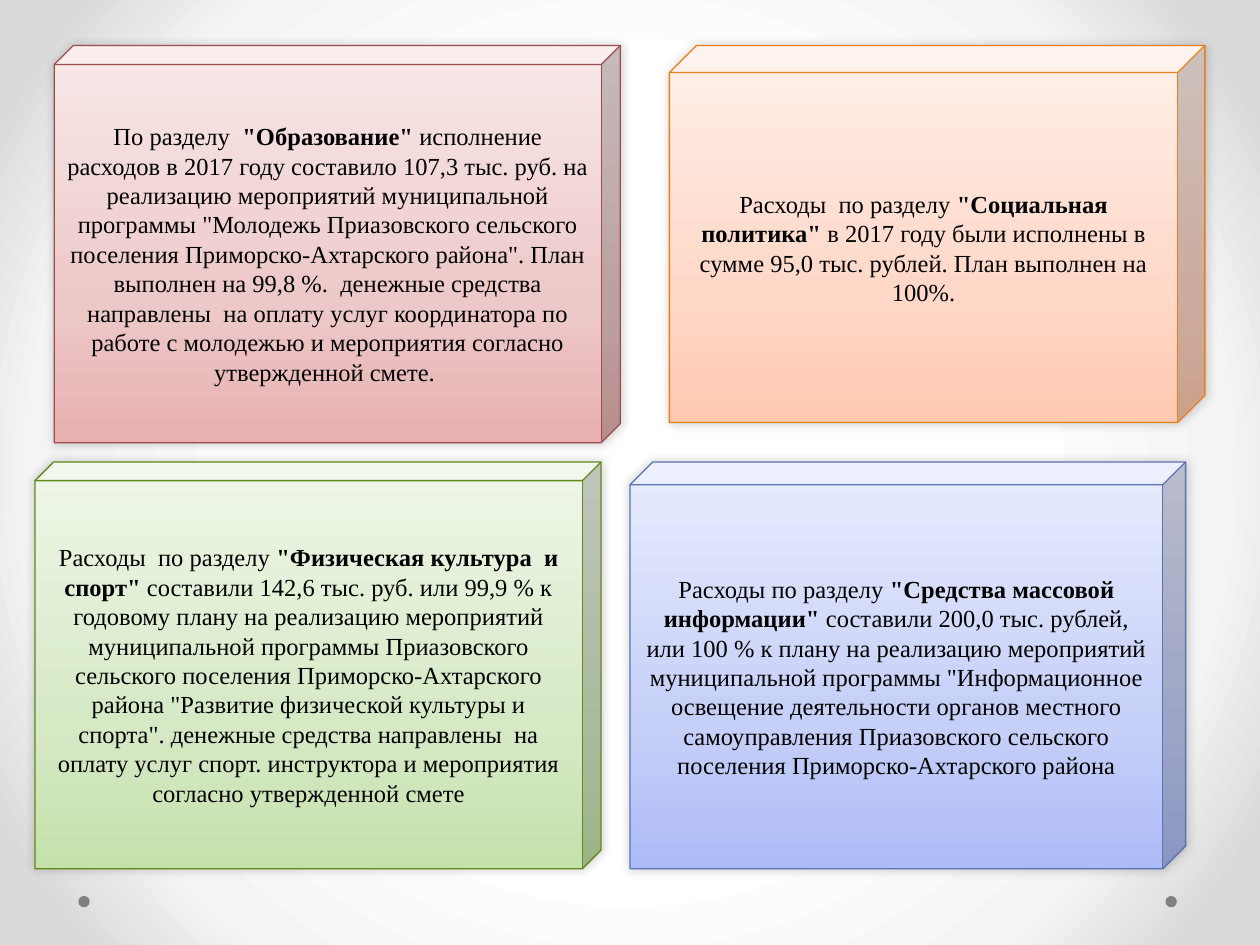
from dataclasses import dataclass

from lxml.etree import SubElement
from pptx import Presentation
from pptx.dml.color import RGBColor
from pptx.enum.shapes import MSO_SHAPE
from pptx.enum.text import MSO_ANCHOR, PP_ALIGN
from pptx.oxml.ns import qn
from pptx.util import Pt

FONT = "Times New Roman"
CUBE_STOPS = (0, 35, 100)


@dataclass
class Card:
    left: float
    top: float
    width: float
    height: float
    depth: float
    colors: tuple[str, str, str]
    line: str
    lead: str
    name: str
    rest: str


CARDS = [
    Card(31, 26, 323.5, 227, 0.048, ("E8B0B0", "EDC8C8", "F9E9E9"), "9A4E4E",
         "По разделу  ", '"Образование"',
         " исполнение расходов в 2017 году составило 107,3 тыс. руб. на реализацию "
         'мероприятий муниципальной программы "Молодежь Приазовского сельского '
         'поселения Приморско-Ахтарского района". План выполнен на 99,8 %.  денежные '
         "средства направлены  на оплату услуг координатора по работе с молодежью и "
         "мероприятия согласно утвержденной смете. "),
    Card(382.5, 26, 306, 215.5, 0.072, ("FFC9B1", "FFD8C8", "FFF0EA"), "E6811C",
         "Расходы  по разделу ", '"Социальная политика"',
         " в 2017 году были исполнены в сумме 95,0 тыс. рублей. План выполнен на 100%."),
    Card(20, 264, 323.5, 232.5, 0.046, ("C5E1AB", "D6E9C5", "EFF7E9"), "62891C",
         "Расходы  по разделу ", '"Физическая культура  и спорт"',
         " составили 142,6 тыс. руб. или 99,9 % к годовому плану на реализацию "
         "мероприятий муниципальной программы Приазовского сельского поселения "
         'Приморско-Ахтарского района "Развитие физической культуры и спорта". '
         "денежные средства направлены  на оплату услуг спорт. инструктора и "
         "мероприятия согласно утвержденной смете"),
    Card(360, 264, 317.5, 232.5, 0.056, ("ADBBF6", "C5CFF8", "E8ECFD"), "5C72B2",
         "Расходы по разделу ", '"Средства массовой информации" ',
         "составили 200,0 тыс. рублей, или 100 % к плану на реализацию мероприятий "
         'муниципальной программы "Информационное освещение деятельности органов '
         "местного самоуправления Приазовского сельского поселения "
         "Приморско-Ахтарского района"),
]


def rgb(color: str) -> RGBColor:
    return RGBColor.from_string(color)


def start_gradient(fill, element, stops):
    fill.gradient()
    grad = element.find(".//" + qn("a:gradFill"))
    for child in list(grad):
        grad.remove(child)
    gs_list = SubElement(grad, qn("a:gsLst"))
    for position, color in stops:
        gs = SubElement(gs_list, qn("a:gs"), pos=str(position * 1000))
        SubElement(gs, qn("a:srgbClr"), val=color)
    return grad


def add_shadow(sp) -> None:
    sp.shadow.inherit = False
    effects = sp.element.spPr.find(qn("a:effectLst"))
    shadow = SubElement(effects, qn("a:outerShdw"), blurRad=str(Pt(6)), dist="0",
                        dir="18900000", rotWithShape="0")
    color = SubElement(shadow, qn("a:srgbClr"), val="000000")
    SubElement(color, qn("a:alpha"), val="20000")


def paint_background(s) -> None:
    stops = [(50, "FFFFFF"), (76, "F4F4F4"), (92, "DADADA")]
    grad = start_gradient(s.background.fill, s.element, stops)
    route = SubElement(grad, qn("a:path"), {"path": "circle"})
    SubElement(route, qn("a:fillToRect"), l="50000", t="50000", r="50000", b="50000")


def add_dot(s, left: float) -> None:
    sp = s.shapes.add_shape(MSO_SHAPE.OVAL, Pt(left), Pt(512), Pt(6.5), Pt(6.5))
    sp.shadow.inherit = False
    sp.fill.solid()
    sp.fill.fore_color.rgb = rgb("808080")
    sp.line.fill.background()


def add_card(s, card: Card) -> None:
    sp = s.shapes.add_shape(MSO_SHAPE.CUBE, Pt(card.left), Pt(card.top),
                            Pt(card.width), Pt(card.height))
    sp.adjustments[0] = card.depth
    grad = start_gradient(sp.fill, sp.element, zip(CUBE_STOPS, card.colors))
    SubElement(grad, qn("a:lin"), ang="16200000", scaled="1")
    sp.line.color.rgb = rgb(card.line)
    sp.line.width = Pt(0.75)
    add_shadow(sp)
    tf = sp.text_frame
    tf.word_wrap = True
    tf.vertical_anchor = MSO_ANCHOR.MIDDLE
    p = tf.paragraphs[0]
    p.alignment = PP_ALIGN.CENTER
    for text, bold in ((card.lead, False), (card.name, True), (card.rest, False)):
        r = p.add_run()
        r.text = text
        r.font.bold = bold
        r.font.name = FONT
        r.font.size = Pt(14)
        r.font.color.rgb = rgb("000000")


def main() -> None:
    prs = Presentation()
    prs.slide_width, prs.slide_height = Pt(720), Pt(540)
    s = prs.slides.add_slide(prs.slide_layouts[6])
    paint_background(s)
    for left in (666, 44.75):
        add_dot(s, left)
    for card in CARDS:
        add_card(s, card)
    prs.save("out.pptx")


if __name__ == "__main__":
    main()
